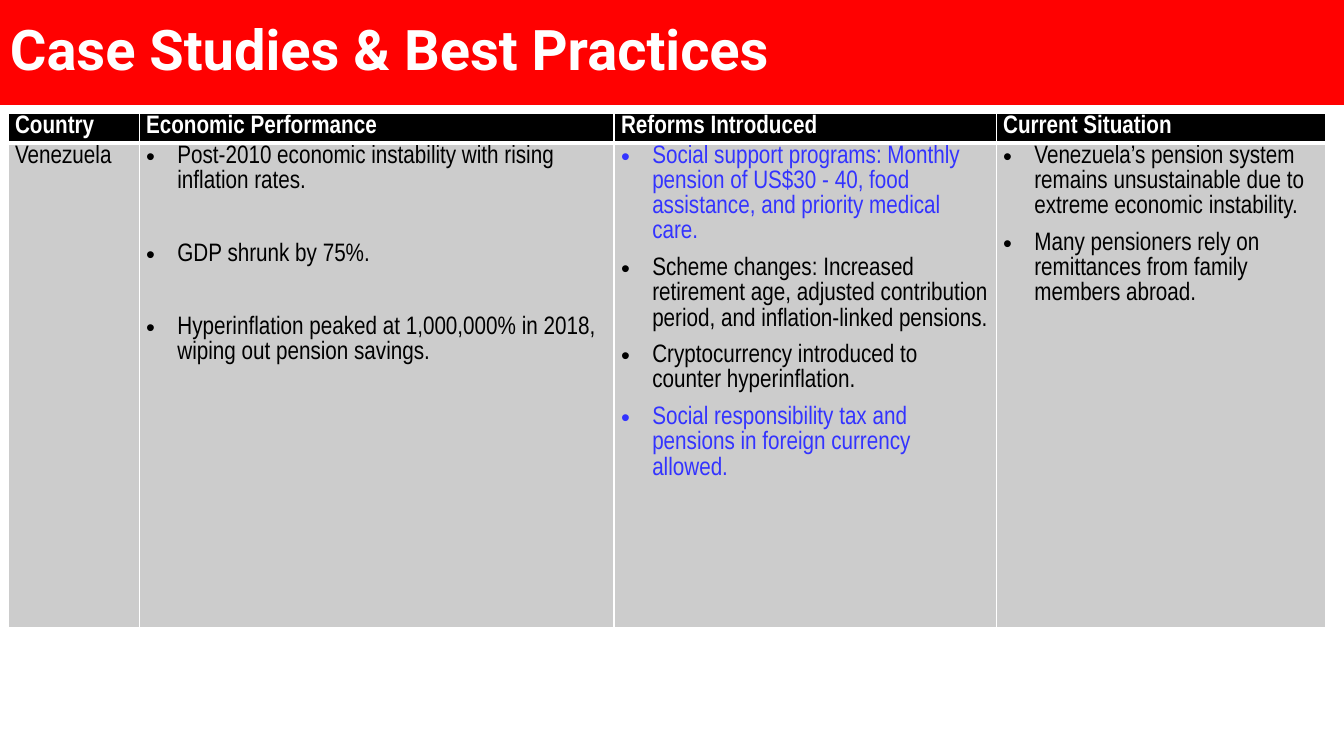
from lxml import etree
from pptx import Presentation
from pptx.dml.color import RGBColor
from pptx.enum.shapes import MSO_SHAPE
from pptx.enum.text import MSO_ANCHOR, PP_ALIGN
from pptx.oxml.ns import qn
from pptx.util import Inches, Pt

RECT = MSO_SHAPE.RECTANGLE
MIDDLE, TOP = MSO_ANCHOR.MIDDLE, MSO_ANCHOR.TOP
LEFT = PP_ALIGN.LEFT

RED, WHITE, BLACK, GREY, BLUE = "FF0101", "FFFFFF", "000000", "CCCCCC", "3333FF"
BODY_FONT, TITLE_FONT = "Arial Narrow", "Roboto"
INDENT = Inches(0.31)

COLUMN_WIDTHS = [1.3, 4.71, 3.79, 3.27]
ROW_HEIGHTS = [0.29, 4.81]
HEADERS = ["Country", "Economic Performance", "Reforms Introduced", "Current Situation"]
COUNTRY = "Venezuela"
# One list per bulleted column: (text, colour)
BULLETS = [
    [
        ("Post-2010 economic instability with rising inflation rates.", BLACK),
        ("GDP shrunk by 75%.", BLACK),
        ("Hyperinflation peaked at 1,000,000% in 2018, wiping out pension savings.", BLACK),
    ],
    [
        ("Social support programs: Monthly pension of US$30 - 40, food assistance, "
         "and priority medical care.", BLUE),
        ("Scheme changes: Increased retirement age, adjusted contribution period, "
         "and inflation-linked pensions.", BLACK),
        ("Cryptocurrency introduced to counter hyperinflation.", BLACK),
        ("Social responsibility tax and pensions in foreign currency allowed.", BLUE),
    ],
    [
        ("Venezuela’s pension system remains unsustainable due to extreme "
         "economic instability.", BLACK),
        ("Many pensioners rely on remittances from family members abroad.", BLACK),
    ],
]
SPACE_AFTER = [34, 8, 8]


def rgb(color):
    return RGBColor.from_string(color)


def add_bullet(p):
    pPr = p._p.get_or_add_pPr()
    pPr.set("marL", str(INDENT))
    pPr.set("indent", str(-INDENT))
    etree.SubElement(pPr, qn("a:buFont")).set("typeface", "Arial")
    etree.SubElement(pPr, qn("a:buChar")).set("char", "•")


def add_text(tf, text, first=True, size=18, font=BODY_FONT, color=BLACK, bold=False,
             bullet=False, line=1.07, after=8):
    p = tf.paragraphs[0] if first else tf.add_paragraph()
    if bullet:
        add_bullet(p)
    p.alignment = LEFT
    p.line_spacing = line
    p.space_after = Pt(after)
    r = p.add_run()
    r.text = text
    r.font.size = Pt(size)
    r.font.name = font
    r.font.bold = bold
    r.font.color.rgb = rgb(color)


def set_borders(cell, **widths):
    tcPr = cell._tc.get_or_add_tcPr()
    for side in "LRTB":
        ln = etree.SubElement(tcPr, qn(f"a:ln{side}"), w=str(Pt(widths.get(side, 1))))
        fill = etree.SubElement(ln, qn("a:solidFill"))
        etree.SubElement(fill, qn("a:srgbClr"), val=WHITE)


def format_cell(cell, fill, **borders):
    set_borders(cell, **borders)
    cell.fill.solid()
    cell.fill.fore_color.rgb = rgb(fill)
    cell.margin_left = cell.margin_right = Inches(0.07)
    cell.margin_top = cell.margin_bottom = 0
    cell.vertical_anchor = TOP


def add_title_bar(s, x, y, w, h):
    sp = s.shapes.add_shape(RECT, Inches(x), Inches(y), Inches(w), Inches(h))
    sp.shadow.inherit = False
    sp.fill.solid()
    sp.fill.fore_color.rgb = rgb(RED)
    sp.line.fill.background()
    tf = sp.text_frame
    tf.word_wrap = True
    tf.vertical_anchor = MIDDLE
    add_text(tf, "Case Studies & Best Practices", size=40, font=TITLE_FONT,
             color=WHITE, bold=True, line=0.9, after=0)


def add_case_table(s, x, y):
    table = s.shapes.add_table(
        len(ROW_HEIGHTS), len(COLUMN_WIDTHS), Inches(x), Inches(y),
        Inches(sum(COLUMN_WIDTHS)), Inches(sum(ROW_HEIGHTS))).table
    for column, width in zip(table.columns, COLUMN_WIDTHS):
        column.width = Inches(width)
    for row, height in zip(table.rows, ROW_HEIGHTS):
        row.height = Inches(height)
    for i, header in enumerate(HEADERS):
        format_cell(table.cell(0, i), BLACK, B=3)
        format_cell(table.cell(1, i), GREY, T=3)
        add_text(table.cell(0, i).text_frame, header, color=WHITE, bold=True)
    add_text(table.cell(1, 0).text_frame, COUNTRY)
    for i, (bullets, after) in enumerate(zip(BULLETS, SPACE_AFTER), start=1):
        tf = table.cell(1, i).text_frame
        for j, (text, color) in enumerate(bullets):
            add_text(tf, text, first=j == 0, color=color, bullet=True, after=after)


def main():
    prs = Presentation()
    prs.slide_width, prs.slide_height = Inches(13.33), Inches(7.5)
    s = prs.slides.add_slide(prs.slide_layouts[6])
    add_title_bar(s, 0, -0.01, 13.33, 1.05)
    add_case_table(s, 0.08, 1.13)
    prs.save("out.pptx")


if __name__ == "__main__":
    main()
